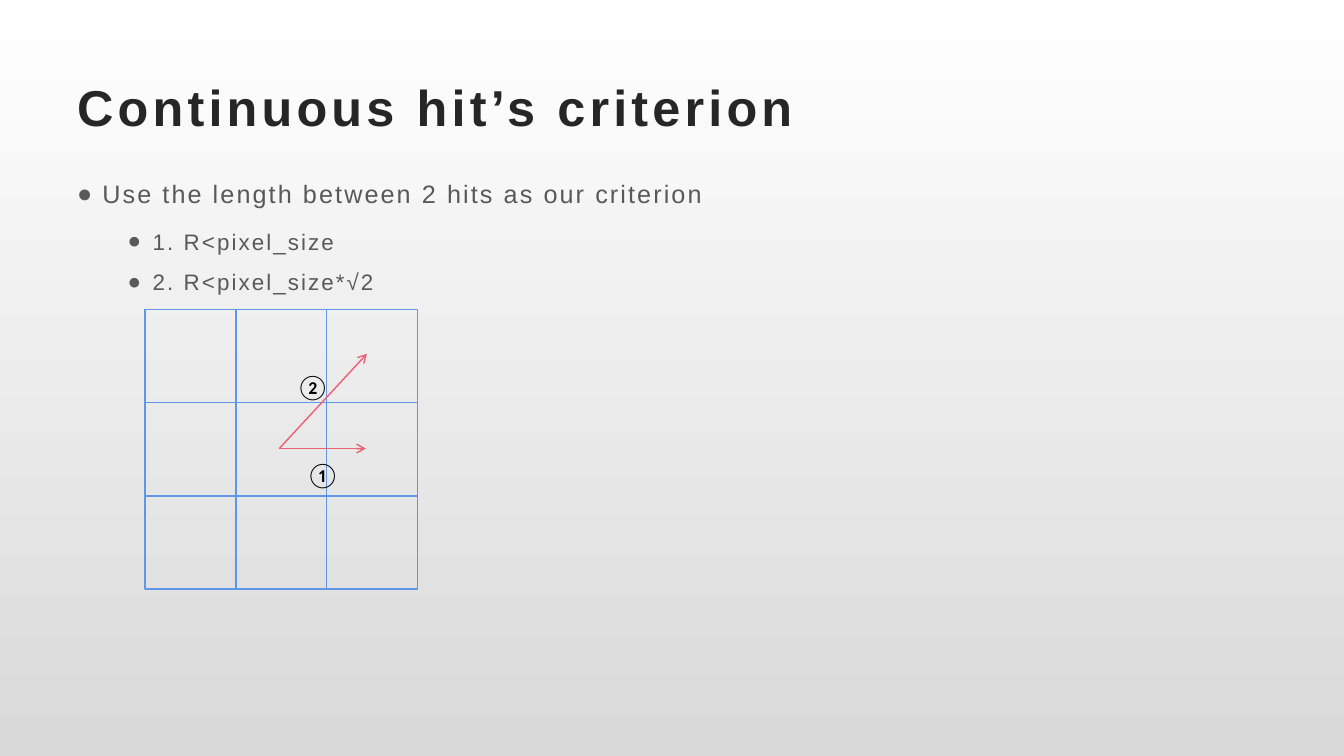
from dataclasses import dataclass
from itertools import product

from lxml.etree import SubElement
from pptx import Presentation
from pptx.dml.color import RGBColor
from pptx.enum.shapes import MSO_CONNECTOR, MSO_SHAPE
from pptx.enum.text import MSO_ANCHOR, MSO_AUTO_SIZE
from pptx.oxml.ns import qn
from pptx.util import Inches, Pt


@dataclass(frozen=True)
class Theme:
    top: str = "FFFFFF"
    base: str = "D9D9D9"
    title: str = "262626"
    body: str = "595959"
    mark: str = "000000"
    cell: str = "6096E6"
    arrow: str = "EC5F74"
    font: str = "Arial"
    mark_font: str = "Calibri"
    title_size: int = 36
    body_size: int = 18
    sub_size: int = 16
    mark_size: int = 18
    line: int = 1


WIDE, HIGH = Inches(13.33), Inches(7.5)
COLS, ROWS = 120, 60


def tint(code):
    return RGBColor.from_string(code)


def write(para, text, *, size, color, font, bold=False, track=0):
    run = para.add_run()
    run.text = text
    run.font.size = Pt(size)
    run.font.name = font
    run.font.bold = bold
    run.font.color.rgb = tint(color)
    if track:
        run._r.get_or_add_rPr().set("spc", str(int(track * 100)))


class Board:
    """Draw styled items on a slide, placed by columns and rows of a grid."""

    def __init__(self, slide, theme):
        self.slide = slide
        self.theme = theme

    def place(self, col, row):
        return int(WIDE * col / COLS), int(HIGH * row / ROWS)

    def ground(self):
        fill = self.slide.background.fill
        fill.gradient()
        fill.gradient_angle = 270
        for stop, code in zip(fill.gradient_stops, (self.theme.top, self.theme.base)):
            stop.color.rgb = tint(code)

    def frame(self, col, row, wide, high):
        box = self.slide.shapes.add_textbox(*self.place(col, row), *self.place(wide, high))
        box.text_frame.word_wrap = True
        return box.text_frame

    def title(self, text, *spot):
        frame = self.frame(*spot)
        frame.vertical_anchor = MSO_ANCHOR.MIDDLE
        write(frame.paragraphs[0], text, size=self.theme.title_size,
              color=self.theme.title, font=self.theme.font, bold=True, track=3)

    def bullets(self, items, *spot):
        frame = self.frame(*spot)
        for index, (level, text) in enumerate(items):
            para = frame.add_paragraph() if index else frame.paragraphs[0]
            para.level = level
            para.line_spacing = 1.2 if level else 1.3
            para.space_after = Pt(6 if level else 10)
            props = para._p.get_or_add_pPr()
            props.set("marL", str(Inches(0.25 + 0.5 * level)))
            props.set("indent", str(Inches(-0.25)))
            SubElement(props, qn("a:buFont")).set("typeface", self.theme.font)
            SubElement(props, qn("a:buChar")).set("char", "●")
            size = self.theme.sub_size if level else self.theme.body_size
            write(para, text, size=size, color=self.theme.body,
                  font=self.theme.font, track=1.5)

    def cell(self, col, row, wide, high):
        box = self.slide.shapes.add_shape(
            MSO_SHAPE.RECTANGLE, *self.place(col, row), *self.place(wide, high))
        box.shadow.inherit = False
        box.fill.background()
        box.line.color.rgb = tint(self.theme.cell)
        box.line.width = Pt(self.theme.line)

    def arrow(self, start, end):
        link = self.slide.shapes.add_connector(
            MSO_CONNECTOR.STRAIGHT, *self.place(*start), *self.place(*end))
        link.line.color.rgb = tint(self.theme.arrow)
        link.line.width = Pt(self.theme.line)
        SubElement(link.line._ln, qn("a:tailEnd")).set("type", "arrow")
        SubElement(link._element.spPr, qn("a:effectLst"))

    def mark(self, text, *spot):
        frame = self.frame(*spot)
        frame.auto_size = MSO_AUTO_SIZE.SHAPE_TO_FIT_TEXT
        write(frame.paragraphs[0], text, size=self.theme.mark_size,
              color=self.theme.mark, font=self.theme.mark_font)


def main():
    deck = Presentation()
    deck.slide_width, deck.slide_height = WIDE, HIGH
    board = Board(deck.slides.add_slide(deck.slide_layouts[6]), Theme())
    board.ground()
    board.title("Continuous hit’s criterion", 6, 5.36, 108, 6.16)
    board.bullets([
        (0, "Use the length between 2 hits as our criterion"),
        (1, "1. R<pixel_size"),
        (1, "2. R<pixel_size*√2"),
    ], 6, 13.04, 108, 41.6)

    left, top, wide, high = 12.96, 24.56, 8.1, 7.4
    for row, col in product(range(3), repeat=2):
        board.cell(left + col * wide, top + row * high, wide, high)

    hit = (24.93, 35.6)
    for end in ((32.67, 35.6), (32.76, 28.08)):
        board.arrow(hit, end)
    board.mark("①", 26.46, 36.08, 4.68, 3.2)
    board.mark("②", 25.56, 29.04, 4.41, 3.2)
    deck.save("out.pptx")


if __name__ == "__main__":
    main()
